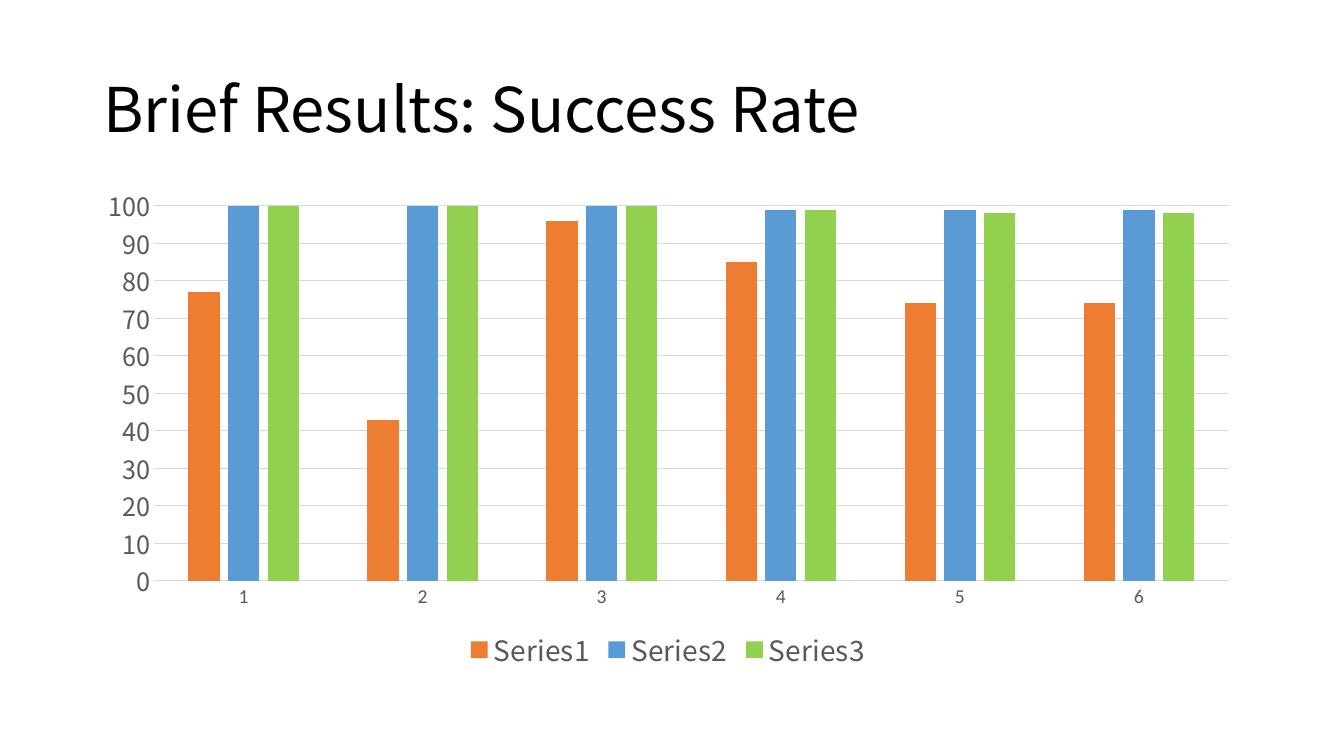
from lxml import etree
from pptx import Presentation
from pptx.chart.data import CategoryChartData
from pptx.dml.color import RGBColor
from pptx.enum.chart import XL_CHART_TYPE as ChartType, XL_LEGEND_POSITION as LegendPosition
from pptx.enum.chart import XL_TICK_MARK as TickMark
from pptx.enum.text import MSO_ANCHOR as Anchor, MSO_AUTO_SIZE as AutoSize, PP_ALIGN as Align
from pptx.oxml.ns import qn
from pptx.util import Emu, Inches, Pt

BLACK = RGBColor(0x00, 0x00, 0x00)
GRAY = RGBColor(0x59, 0x59, 0x59)
GRID = RGBColor(0xD9, 0xD9, 0xD9)
ORANGE = RGBColor(0xED, 0x7D, 0x31)
BLUE = RGBColor(0x5B, 0x9B, 0xD5)
GREEN = RGBColor(0x92, 0xD0, 0x50)

TITLE_ONLY = 5
PX_PER_INCH = 100.8

SUCCESS_RATES = [
    ("Series1", ORANGE, (77, 43, 96, 85, 74, 74)),
    ("Series2", BLUE, (100, 100, 100, 99, 99, 99)),
    ("Series3", GREEN, (100, 100, 100, 99, 98, 98)),
]


def px(length):
    return Emu(round(length * Inches(1) / PX_PER_INCH))


class SlideBuilder:
    """Holds the text style and the current page."""

    text_font = "Noto Sans CJK SC"
    category_font = "Calibri"

    def __init__(self, deck):
        self.page = deck.slides.add_slide(deck.slide_layouts[TITLE_ONLY])

    def style(self, font, size, color, name=None):
        font.name = name or self.text_font
        font.size = Pt(size)
        font.color.rgb = color

    def title(self, text, left, top, width, height):
        box = self.page.shapes.title
        box.left, box.top, box.width, box.height = map(px, (left, top, width, height))
        frame = box.text_frame
        frame.word_wrap = True
        frame.auto_size = AutoSize.NONE
        frame.vertical_anchor = Anchor.MIDDLE
        para = frame.paragraphs[0]
        para.alignment = Align.LEFT
        para.line_spacing = 0.9
        span = para.add_run()
        span.text = text
        self.style(span.font, 44, BLACK)

    def column_chart(self, rates, left, top, width, height):
        data = CategoryChartData()
        data.categories = [str(number) for number in range(1, len(rates[0][2]) + 1)]
        for name, _, values in rates:
            data.add_series(name, values)
        frame = self.page.shapes.add_chart(
            ChartType.COLUMN_CLUSTERED, *map(px, (left, top, width, height)), data)
        chart = frame.chart
        chart.has_title = False
        self.style(chart.font, 10, BLACK)

        plot = chart.plots[0]
        plot.vary_by_categories = False
        plot.gap_width = 219
        plot.overlap = -27
        for series, (_, color, _) in zip(plot.series, rates):
            series.format.fill.solid()
            series.format.fill.fore_color.rgb = color

        self.axes(chart)
        self.legend(chart)
        self.place_plot(chart, x=0.06, y=0.06, w=0.92, h=0.75)

    def axes(self, chart):
        categories, values = chart.category_axis, chart.value_axis
        for axis in (categories, values):
            axis.major_tick_mark = axis.minor_tick_mark = TickMark.NONE
        self.style(categories.tick_labels.font, 14, GRAY, self.category_font)
        self.style(values.tick_labels.font, 18, GRAY)
        values.minimum_scale, values.maximum_scale, values.major_unit = 0, 100, 10
        values.has_major_gridlines = True
        values.format.line.fill.background()
        for line in (categories.format.line, values.major_gridlines.format.line):
            line.color.rgb = GRID
            line.width = Pt(0.75)

    def legend(self, chart):
        chart.has_legend = True
        chart.legend.position = LegendPosition.BOTTOM
        chart.legend.include_in_layout = False
        self.style(chart.legend.font, 20, GRAY)

    def place_plot(self, chart, **fractions):
        """Fix the inner plot area as fractions of the chart's size."""
        area = chart.element.find(".//" + qn("c:plotArea"))
        for old_layout in area.findall(qn("c:layout")):
            area.remove(old_layout)
        layout = etree.Element(qn("c:layout"))
        manual = etree.SubElement(layout, qn("c:manualLayout"))
        settings = {"layoutTarget": "inner", "xMode": "edge", "yMode": "edge", **fractions}
        for tag, value in settings.items():
            etree.SubElement(manual, qn("c:" + tag)).set("val", str(value))
        area.insert(0, layout)


def main():
    deck = Presentation()
    deck.slide_width, deck.slide_height = px(1344), px(756)
    builder = SlideBuilder(deck)
    builder.title("Brief Results: Success Rate", 93, 40, 1159, 146)
    builder.column_chart(SUCCESS_RATES, 84, 176, 1168, 500)
    deck.save("out.pptx")


if __name__ == "__main__":
    main()
